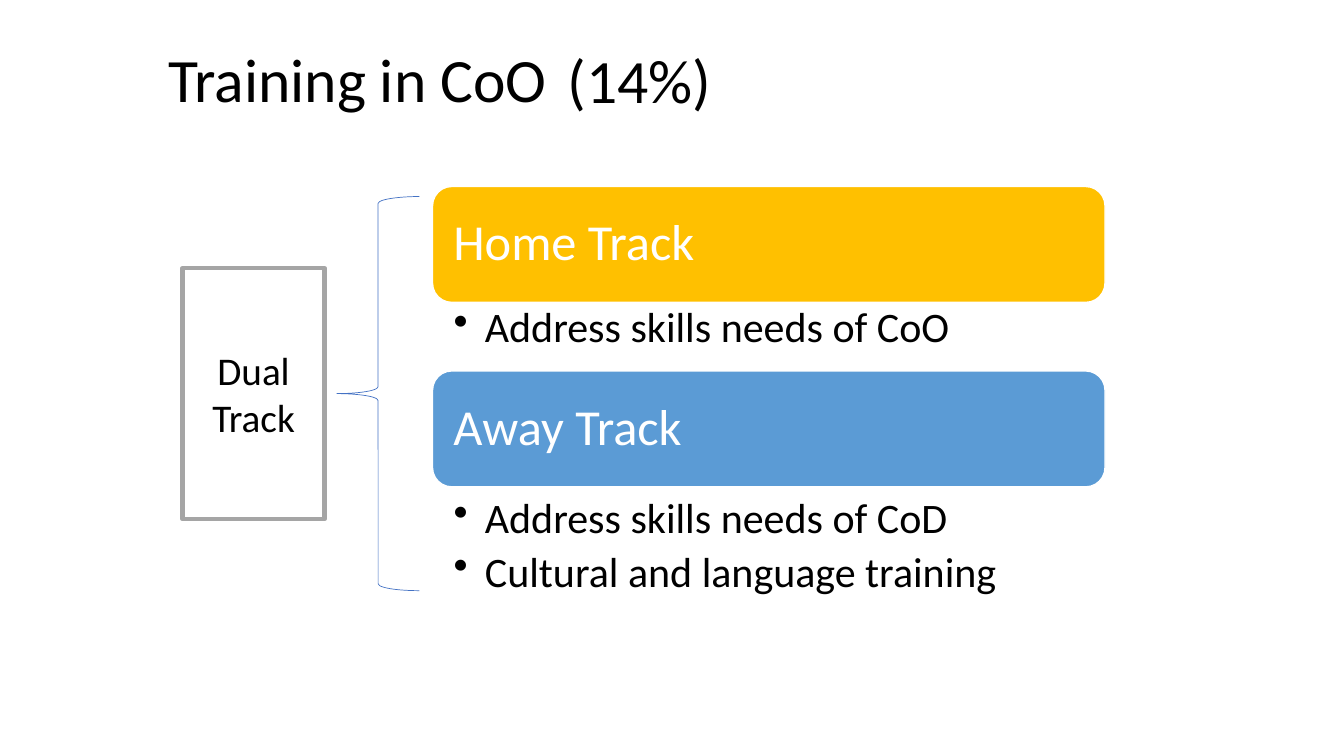
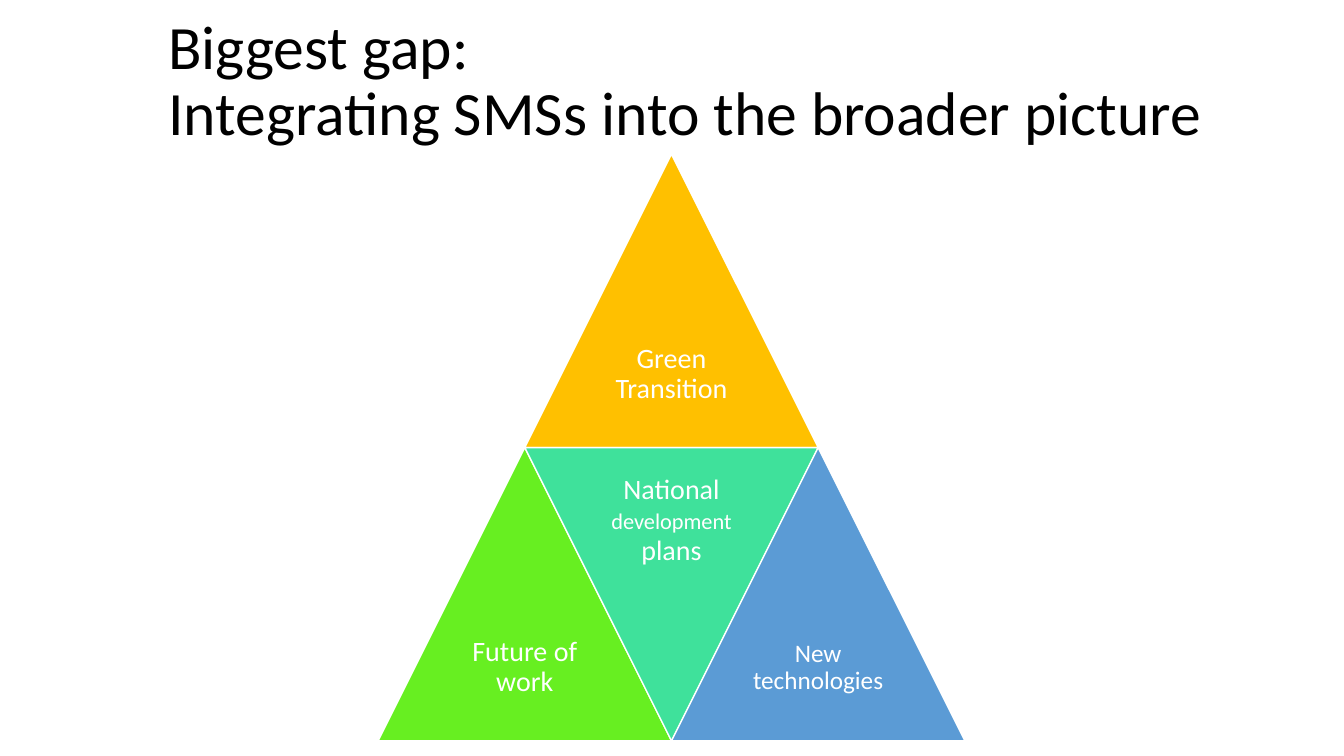
import dataclasses
import itertools
import typing

import lxml.etree
import pptx
import pptx.dml.color
import pptx.enum.shapes
import pptx.enum.text
import pptx.oxml.ns
import pptx.util

Inches = pptx.util.Inches
Pt = pptx.util.Pt
Kind = pptx.enum.shapes.MSO_SHAPE
Align = pptx.enum.text.PP_ALIGN
Anchor = pptx.enum.text.MSO_ANCHOR

FONT = "Calibri"
BLACK, WHITE, GREY = "000000", "FFFFFF", "A5A5A5"
GOLD, BLUE, NAVY = "FFC000", "5B9BD5", "4472C4"
LIME, MINT = "67EF21", "3FE19B"
SIDE = 2.91


@dataclasses.dataclass
class Box:
    left: float
    top: float
    width: float
    height: float

    def place(self) -> tuple:
        return tuple(map(Inches, (self.left, self.top, self.width, self.height)))


@dataclasses.dataclass
class Track:
    name: str
    color: str
    top: float
    points: str
    gap: float


@dataclasses.dataclass
class Piece:
    text: str
    color: str
    row: int
    col: int
    sizes: tuple = (20,)
    kind: typing.Any = Kind.ISOSCELES_TRIANGLE


TRACKS = [
    Track("Home Track", GOLD, 1.85, "Address skills needs of CoO", 0),
    Track("Away Track", BLUE, 3.68,
          "Address skills needs of CoD\nCultural and language training", 0.06),
]
PIECES = [
    Piece("Green Transition", GOLD, 0, 1),
    Piece("Future of work", LIME, 1, 0),
    Piece("National |development| plans", MINT, 1, 1, (20, 16), Kind.FLOWCHART_MERGE),
    Piece("New technologies", BLUE, 1, 2, (18,)),
]


def rgb(color: str) -> pptx.dml.color.RGBColor:
    return pptx.dml.color.RGBColor.from_string(color)


def write(shape, text: str, *, sizes: tuple, color: str = BLACK, align=Align.LEFT,
          anchor=Anchor.MIDDLE, pads: tuple = (0.1, 0.05, 0.1, 0.05),
          lead: float = 0.9, after: float = 0, bullet: bool = False) -> None:
    frame = shape.text_frame
    frame.word_wrap = True
    frame.vertical_anchor = anchor
    (frame.margin_left, frame.margin_top,
     frame.margin_right, frame.margin_bottom) = map(Inches, pads)
    for index, line in enumerate(text.split("\n")):
        para = frame.add_paragraph() if index else frame.paragraphs[0]
        para.alignment = align
        para.line_spacing = lead
        para.space_after = Pt(after)
        for part, size in zip(line.split("|"), itertools.cycle(sizes)):
            run = para.add_run()
            run.text = part
            run.font.name = FONT
            run.font.size = Pt(size)
            run.font.color.rgb = rgb(color)
        if bullet:
            props = para._p.get_or_add_pPr()
            props.set("marL", str(Inches(0.31)))
            props.set("indent", str(Inches(-0.31)))
            mark = lxml.etree.SubElement(props, pptx.oxml.ns.qn("a:buChar"))
            mark.set("char", "•")


def label(slide, box: Box, text: str, **style) -> None:
    write(slide.shapes.add_textbox(*box.place()), text, **style)


def draw(slide, kind, box: Box, fill: str | None = None,
         line: str = WHITE, weight: float = 1):
    shape = slide.shapes.add_shape(kind, *box.place())
    shape.shadow.inherit = False
    if fill:
        shape.fill.solid()
        shape.fill.fore_color.rgb = rgb(fill)
    else:
        shape.fill.background()
    shape.line.color.rgb = rgb(line)
    shape.line.width = Pt(weight)
    return shape


def start(deck, title: str):
    slide = deck.slides.add_slide(deck.slide_layouts[6])
    label(slide, Box(1.57, 0.26, 10.81, 1.12), title, sizes=(44,))
    return slide


def add_tracks(deck) -> None:
    slide = start(deck, "Training in CoO")
    label(slide, Box(5.53, 0.27, 1.66, 1.12), "(14%)", sizes=(44,))
    for track in TRACKS:
        bar = Box(4.29, track.top, 6.67, 1.15)
        shape = draw(slide, Kind.ROUNDED_RECTANGLE, bar, track.color)
        write(shape, track.name, sizes=(36,), color=WHITE, pads=(0.15,) * 4)
        below = Box(bar.left, bar.top + bar.height + track.gap, bar.width, 1.11)
        label(slide, below, track.points, sizes=(30,), anchor=Anchor.TOP,
              pads=(0.21, 0.04, 0.23, 0.04), after=6, bullet=True)
    draw(slide, Kind.LEFT_BRACE, Box(3.34, 1.95, 0.82, 3.91), line=NAVY, weight=0.5)
    dual = draw(slide, Kind.RECTANGLE, Box(1.81, 2.66, 1.41, 2.49), WHITE, GREY, 3)
    write(dual, "Dual Track", sizes=(28,), align=Align.CENTER, lead=1)


def add_gap(deck) -> None:
    slide = start(deck, "Biggest gap:\nIntegrating SMSs into the broader picture")
    for piece in PIECES:
        box = Box(3.75 + piece.col * SIDE / 2, 1.53 + piece.row * SIDE, SIDE, SIDE)
        shape = draw(slide, piece.kind, box, piece.color)
        write(shape, piece.text, sizes=piece.sizes, color=WHITE,
              align=Align.CENTER, pads=(0.08,) * 4)


def main() -> None:
    deck = pptx.Presentation()
    deck.slide_width = Inches(13.33)
    deck.slide_height = Inches(7.5)
    add_tracks(deck)
    add_gap(deck)
    deck.save("out.pptx")


if __name__ == "__main__":
    main()
